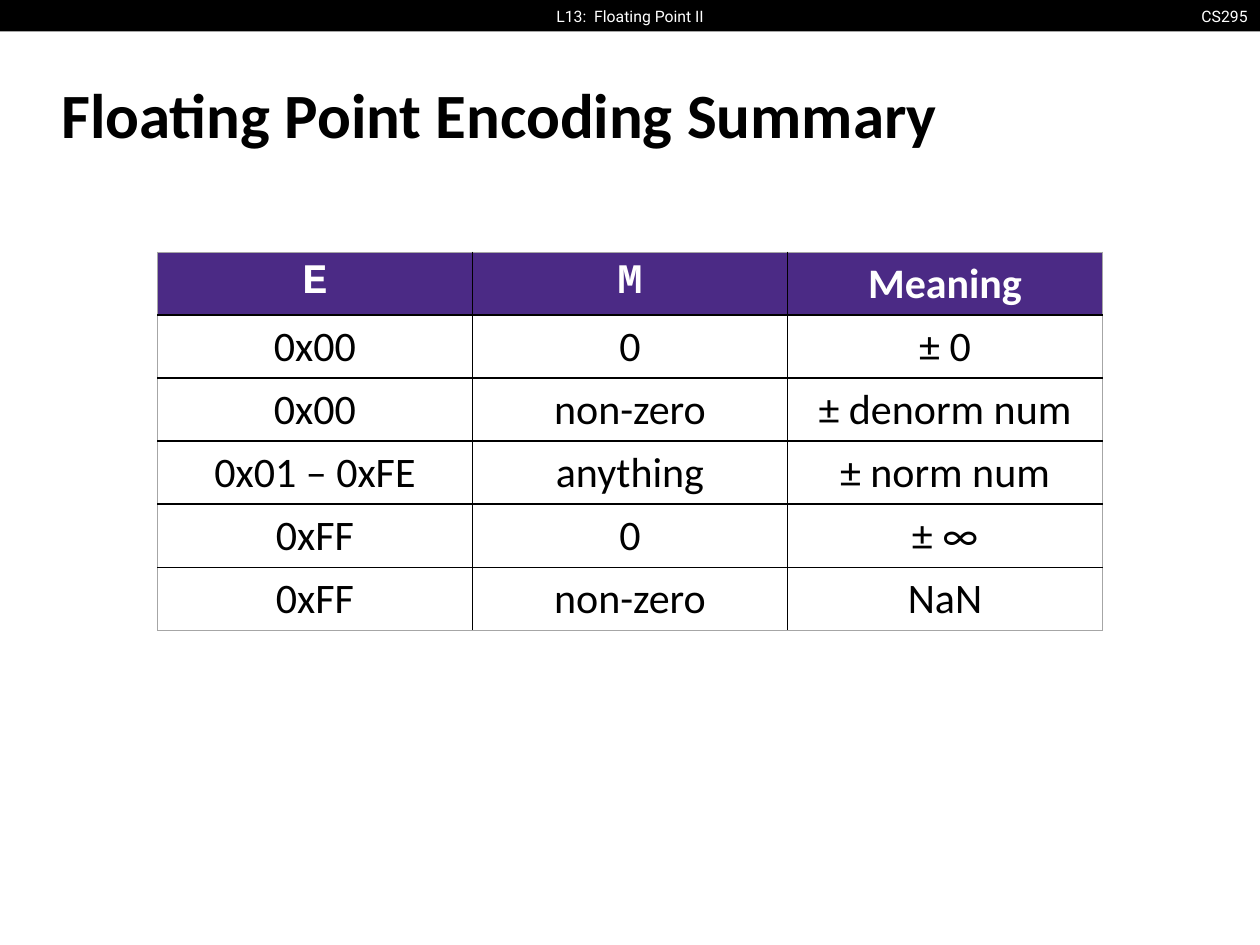
from dataclasses import dataclass

from lxml.etree import SubElement
from pptx import Presentation
from pptx.dml.color import RGBColor as RGB
from pptx.enum.shapes import MSO_SHAPE as SHAPE
from pptx.enum.text import MSO_ANCHOR as ANCHOR, PP_ALIGN as ALIGN
from pptx.oxml.ns import qn
from pptx.util import Pt


@dataclass(frozen=True)
class Theme:
    black: str = "000000"
    white: str = "FFFFFF"
    purple: str = "4B2A85"
    grey: str = "A6A6A6"
    body: str = "Calibri"
    code: str = "Courier New"
    bar: str = "Roboto"
    title_size: int = 36
    table_size: int = 24
    bar_size: int = 9
    inner_line: float = 1
    outer_line: float = 0.5


THEME = Theme()
HEADER = ["E", "M", "Meaning"]
ENCODINGS = [
    ["0x00", "0", "± 0"],
    ["0x00", "non-zero", "± denorm num"],
    ["0x01 – 0xFE", "anything", "± norm num"],
    ["0xFF", "0", "± ∞"],
    ["0xFF", "non-zero", "NaN"],
]


def add_run(tf, text, font, size, color, bold=False, align=ALIGN.LEFT):
    p = tf.paragraphs[0]
    p.alignment = align
    r = p.add_run()
    r.text = text
    r.font.name, r.font.size, r.font.bold = font, Pt(size), bold
    r.font.color.rgb = RGB.from_string(color)


def add_text(slide, box, text, font, size, color, wrap=True, **style):
    tf = slide.shapes.add_textbox(*map(Pt, box)).text_frame
    tf.word_wrap = wrap
    tf.vertical_anchor = ANCHOR.MIDDLE
    add_run(tf, text, font, size, color, **style)


def add_top_bar(slide):
    sp = slide.shapes.add_shape(SHAPE.RECTANGLE, 0, 0, Pt(720), Pt(18))
    sp.shadow.inherit = False
    sp.fill.solid()
    sp.fill.fore_color.rgb = RGB.from_string(THEME.black)
    sp.line.fill.background()
    labels = [
        ((677.5, 0, 42.5, 18), "CS295", ALIGN.RIGHT),
        ((290, 0, 140, 18), "L13:  Floating Point II", ALIGN.CENTER),
    ]
    for box, text, align in labels:
        add_text(slide, box, text, THEME.bar, THEME.bar_size, THEME.white,
                 wrap=False, align=align)


def set_borders(cell, outer_sides):
    """Draw the four cell edges, lighter where they bound the table."""
    tc_pr = cell._tc.get_or_add_tcPr()
    for i, side in enumerate("LRTB"):
        outer = side in outer_sides
        width = THEME.outer_line if outer else THEME.inner_line
        ln = SubElement(tc_pr, qn(f"a:ln{side}"), w=str(Pt(width)))
        fill = SubElement(ln, qn("a:solidFill"))
        SubElement(fill, qn("a:srgbClr"),
                   val=THEME.grey if outer else THEME.black)
        tc_pr.insert(i, ln)


def add_encoding_table(slide, left, top, col_width, row_height):
    rows = [HEADER] + ENCODINGS
    n_rows, n_cols = len(rows), len(HEADER)
    table = slide.shapes.add_table(
        n_rows, n_cols, Pt(left), Pt(top),
        Pt(col_width * n_cols), Pt(row_height * n_rows)).table
    table.first_row = table.horz_banding = False
    for i, row in enumerate(rows):
        for j, text in enumerate(row):
            cell = table.cell(i, j)
            header = i == 0
            if header:
                cell.fill.solid()
                cell.fill.fore_color.rgb = RGB.from_string(THEME.purple)
            else:
                cell.fill.background()
            edges = {"L": j == 0, "R": j == n_cols - 1,
                     "T": i == 0, "B": i == n_rows - 1}
            set_borders(cell, [side for side, outer in edges.items() if outer])
            add_run(cell.text_frame, text,
                    THEME.code if text in ("E", "M") else THEME.body,
                    THEME.table_size,
                    THEME.white if header else THEME.black,
                    bold=header, align=ALIGN.CENTER)


def main():
    prs = Presentation()
    prs.slide_width, prs.slide_height = Pt(720), Pt(540)
    slide = prs.slides.add_slide(prs.slide_layouts[6])

    # Course bar
    add_top_bar(slide)

    # Title
    add_text(slide, (28, 34.5, 662, 60), "Floating Point Encoding Summary",
             THEME.body, THEME.title_size, THEME.black, bold=True)

    # Encoding table
    add_encoding_table(slide, left=90, top=144, col_width=180, row_height=36)

    prs.save("out.pptx")


if __name__ == "__main__":
    main()
